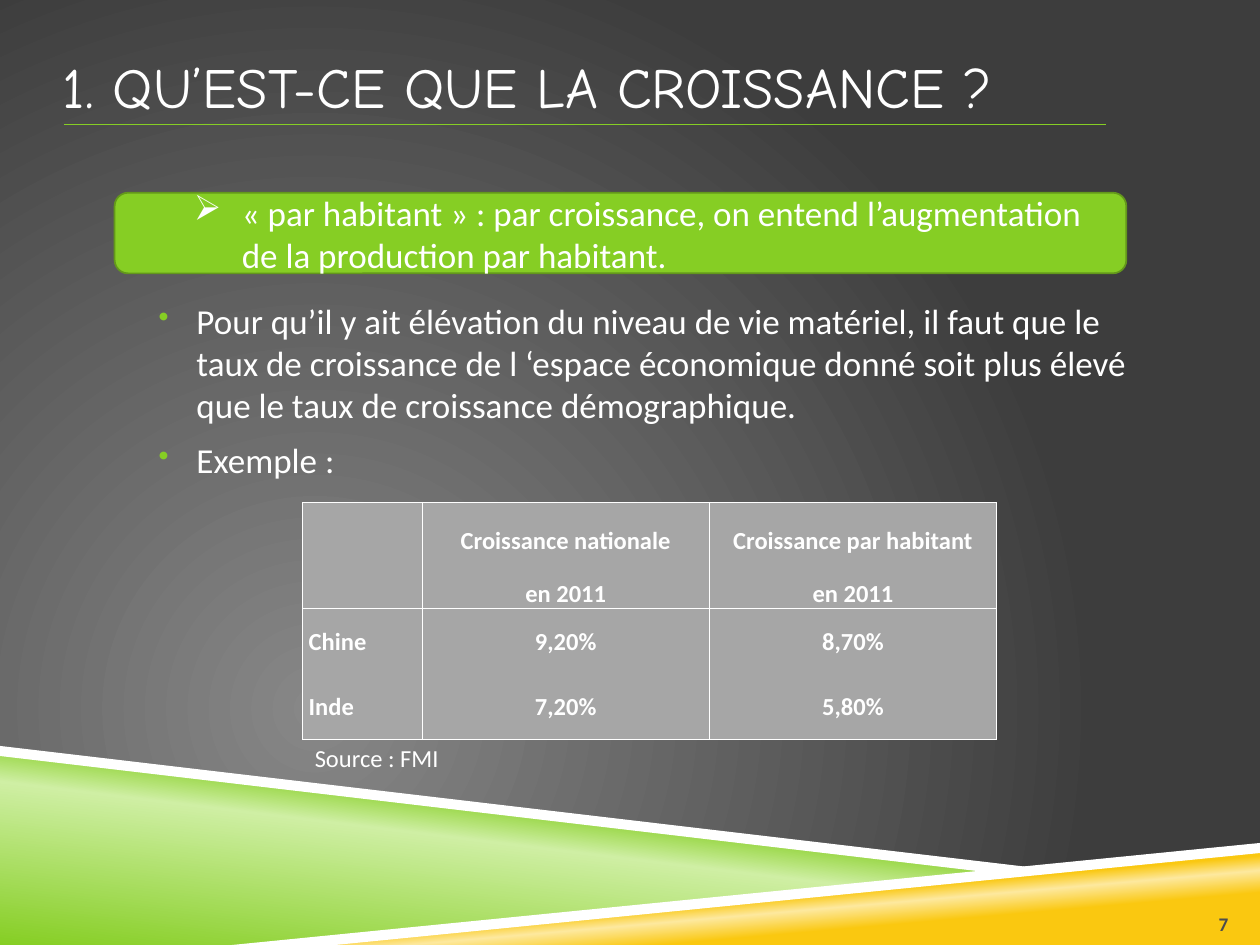
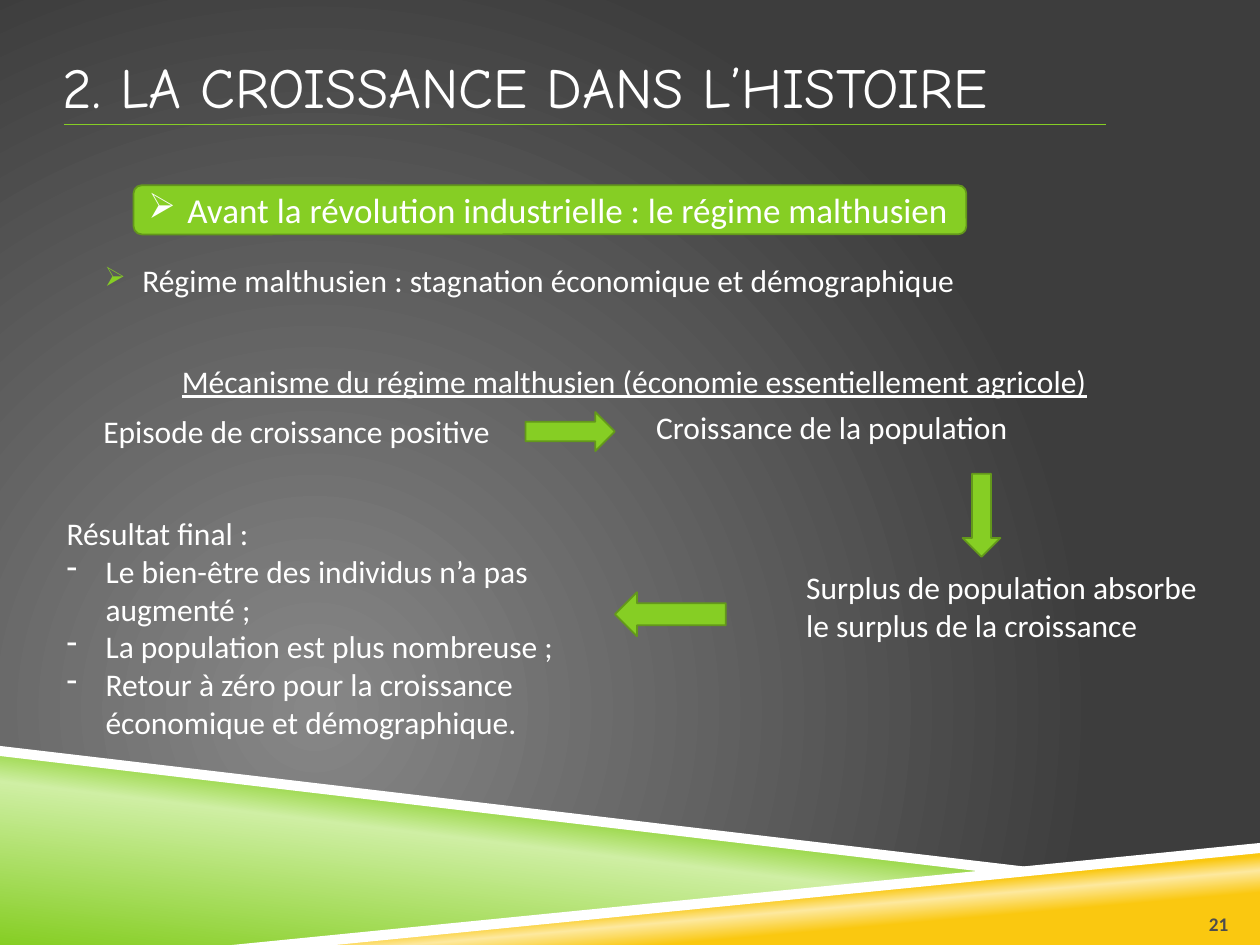
"""Build two lesson slides about economic growth."""
from dataclasses import dataclass
from typing import Any, Optional

from lxml import etree
from pptx import Presentation
from pptx import util as u
from pptx.dml.color import RGBColor
from pptx.enum import shapes, text
from pptx.oxml.ns import qn

WHITE = RGBColor(0xFF, 0xFF, 0xFF)
GREEN = RGBColor(0x86, 0xCE, 0x24)
PALE = RGBColor(0xCF, 0xEF, 0xA4)
EDGE = RGBColor(0x63, 0x98, 0x1B)
GOLD = RGBColor(0xFA, 0xC8, 0x10)
CREAM = RGBColor(0xFD, 0xE9, 0x9F)
GREY = RGBColor(0xA6, 0xA6, 0xA6)
ASH = RGBColor(0x87, 0x87, 0x87)
DARK = RGBColor(0x3D, 0x3D, 0x3D)
SLATE = RGBColor(0x4D, 0x4D, 0x4D)

BODY = "Calibri"
HEAD = "Comic Neue"
LEFT, MID, RIGHT = text.PP_ALIGN.LEFT, text.PP_ALIGN.CENTER, text.PP_ALIGN.RIGHT
TOP, CENTRE, LOW = (text.MSO_ANCHOR.TOP, text.MSO_ANCHOR.MIDDLE,
                    text.MSO_ANCHOR.BOTTOM)
KIND = shapes.MSO_SHAPE
PAD = (0.1, 0.05, 0.1, 0.05)
FLUSH = (0, 0.05, 0, 0.05)


@dataclass(frozen=True)
class Box:
    """A place on the slide, in inches."""
    x: float
    y: float
    w: float
    h: float

    def emu(self) -> tuple:
        """Give the place as lengths."""
        return tuple(u.Inches(n) for n in (self.x, self.y, self.w, self.h))


@dataclass(frozen=True)
class Para:
    """A paragraph with its look."""
    words: str
    size: float = 18
    mark: str = ""
    tint: Optional[RGBColor] = None
    left: float = 0
    hang: float = 0
    gap: float = 0
    level: int = 0
    align: Any = LEFT
    font: str = BODY
    ink: RGBColor = WHITE
    bold: bool = False
    under: bool = False


@dataclass(frozen=True)
class Band:
    """A filled outline at the foot of the slide."""
    points: tuple
    stops: tuple
    angle: int = 0


@dataclass(frozen=True)
class Arrow:
    """A block arrow."""
    kind: Any
    box: Box


BANDS = (
    Band(((0, 5.97), (7.92, 6.92), (2, 7.5), (0, 7.5)),
         ((0, GREEN), (52, PALE), (66, GREEN)), 277),
    Band(((1.98, 7.5), (10, 6.72), (10, 7.5)),
         ((28, GOLD), (40, CREAM), (48, GOLD)), 265),
    Band(((0, 5.92), (0, 6), (7.9, 6.93), (8.32, 6.9)), ((0, WHITE),)),
    Band(((10, 6.69), (1.84, 7.5), (2.66, 7.5), (10, 6.77)), ((0, WHITE),)),
)
ARROWS = (
    Arrow(KIND.RIGHT_ARROW, Box(4.17, 3.27, 0.71, 0.31)),
    Arrow(KIND.DOWN_ARROW, Box(7.64, 3.76, 0.3, 0.66)),
    Arrow(KIND.LEFT_ARROW, Box(4.88, 4.7, 0.88, 0.35)),
)
ROWS = (
    ("", "Croissance nationale", "Croissance par habitant"),
    ("", "en 2011", "en 2011"),
    ("Chine", "9,20%", "8,70%"),
    ("Inde", "7,20%", "5,80%"),
)


def add(root: Any, tag: str, **attrs: Any) -> Any:
    """Append an element with attributes."""
    return etree.SubElement(root, qn(tag), {k: str(v) for k, v in attrs.items()})


def tone(root: Any, ink: RGBColor) -> None:
    """Append a plain colour."""
    add(root, "a:srgbClr", val=ink)


def blend(grad: Any, stops: tuple) -> None:
    """Replace the content of a gradient by new stops."""
    for child in list(grad):
        grad.remove(child)
    group = add(grad, "a:gsLst")
    for place, ink in stops:
        tone(add(group, "a:gs", pos=place * 1000), ink)


def style(para: Any, look: Para) -> None:
    """Write one paragraph and format it."""
    para.text = look.words
    para.alignment = look.align
    para.level = look.level
    if look.gap:
        para.space_before = u.Pt(look.gap)
    props = para._p.get_or_add_pPr()
    props.set("marL", str(u.Inches(look.left)))
    props.set("indent", str(u.Inches(-look.hang)))
    if look.mark:
        if look.tint:
            tone(add(props, "a:buClr"), look.tint)
            add(props, "a:buSzPct", val=85000)
        add(props, "a:buChar", char=look.mark)
    for run in para.runs:
        font = run.font
        font.name, font.size, font.bold = look.font, u.Pt(look.size), look.bold
        font.color.rgb = look.ink
        font.underline = look.under


def write(frame: Any, paras: tuple, anchor: Any = TOP, pad: tuple = PAD) -> None:
    """Fill a text frame with paragraphs."""
    frame.word_wrap = True
    frame.vertical_anchor = anchor
    (frame.margin_left, frame.margin_top, frame.margin_right,
     frame.margin_bottom) = (u.Inches(n) for n in pad)
    frame.text = "\n".join(look.words for look in paras)
    for para, look in zip(frame.paragraphs, paras):
        style(para, look)


def note(slide: Any, box: Box, *paras: Para, anchor: Any = TOP,
         pad: tuple = PAD) -> None:
    """Add a text box."""
    write(slide.shapes.add_textbox(*box.emu()).text_frame, paras, anchor, pad)


def block(slide: Any, kind: Any, box: Box) -> Any:
    """Add a green shape with a darker edge."""
    shape = slide.shapes.add_shape(kind, *box.emu())
    shape.shadow.inherit = False
    shape.fill.solid()
    shape.fill.fore_color.rgb = GREEN
    shape.line.color.rgb = EDGE
    shape.line.width = u.Pt(1)
    return shape


def pill(slide: Any, box: Box, look: Para) -> None:
    """Add a rounded heading."""
    shape = block(slide, KIND.ROUNDED_RECTANGLE, box)
    write(shape.text_frame, (look,), CENTRE)


def strip(slide: Any, band: Band) -> None:
    """Draw one band."""
    first, *rest = [tuple(u.Inches(n) for n in spot) for spot in band.points]
    pen = slide.shapes.build_freeform(*first, scale=1.0)
    pen.add_line_segments(rest, close=True)
    shape = pen.convert_to_shape()
    shape.shadow.inherit = False
    shape.line.fill.background()
    if len(band.stops) == 1:
        shape.fill.solid()
        shape.fill.fore_color.rgb = band.stops[0][1]
        return
    shape.fill.gradient()
    grad = shape._element.spPr.find(qn("a:gradFill"))
    blend(grad, band.stops)
    add(grad, "a:lin", ang=band.angle * 60000, scaled=0)


def page(deck: Any, title: str, count: str) -> Any:
    """Add a slide with bands, title, rule and number."""
    slide = deck.slides.add_slide(deck.slide_layouts[6])
    for band in BANDS:
        strip(slide, band)
    note(slide, Box(0.5, 0.3, 8.33, 0.77), Para(title, 32.4, font=HEAD),
         anchor=CENTRE, pad=FLUSH)
    rule = slide.shapes.add_connector(
        shapes.MSO_CONNECTOR.STRAIGHT,
        *(u.Inches(n) for n in (0.51, 0.99, 8.78, 0.99)))
    rule.line.color.rgb = GREEN
    rule.line.width = u.Pt(0.75)
    add(rule._element.spPr, "a:effectLst")
    note(slide, Box(9.25, 7.02, 0.5, 0.4),
         Para(count, 11, align=RIGHT, ink=SLATE, bold=True),
         anchor=LOW, pad=(0, 0.05, 0, 0))
    return slide


def frame_cell(cell: Any, sides: str) -> None:
    """Draw the named sides of a cell and clear the others."""
    props = cell._tc.get_or_add_tcPr()
    for place, side in enumerate("LRTB"):
        line = add(props, f"a:ln{side}", w=u.Pt(0.5))
        if side in sides:
            tone(add(line, "a:solidFill"), WHITE)
        else:
            add(line, "a:noFill")
        props.insert(place, line)


def rates(slide: Any) -> None:
    """Add the table of growth rates."""
    table = slide.shapes.add_table(
        4, 3, *Box(2.4, 3.99, 5.51, 1.88).emu()).table
    table.first_row = table.horz_banding = False
    for col, width in zip(table.columns, (0.95, 2.28, 2.28)):
        col.width = u.Inches(width)
    for row, (line, high) in enumerate(zip(ROWS, (0.42, 0.42, 0.52, 0.52))):
        table.rows[row].height = u.Inches(high)
        for col, words in enumerate(line):
            cell = table.cell(row, col)
            cell.fill.solid()
            cell.fill.fore_color.rgb = GREY
            cell.vertical_anchor = LOW if row < 2 else CENTRE
            cell.margin_left = u.Inches(0.01 if col else 0.05)
            cell.margin_top = cell.margin_right = u.Inches(0.01)
            cell.margin_bottom = 0
            style(cell.text_frame.paragraphs[0],
                  Para(words, 14, align=MID if col else LEFT, bold=True))
            frame_cell(cell, "LRB" if row % 2 else "LRT")


def growth(deck: Any) -> None:
    """Build the slide that defines growth."""
    slide = page(deck, "1. QU’EST-CE QUE LA CROISSANCE ?", "7")
    pill(slide, Box(0.91, 1.53, 8.03, 0.64), Para(
        "« par habitant » : par croissance, on entend l’augmentation "
        "de la production par habitant.", 20, "➢", left=0.88, hang=0.38, level=1))
    dot = dict(size=20, mark="•", tint=GREEN, left=0.81, hang=0.3, level=1)
    note(slide, Box(0.75, 2.33, 8.5, 3.5),
         Para("Pour qu’il y ait élévation du niveau de vie matériel, il faut que "
              "le taux de croissance de l ‘espace économique donné soit plus "
              "élevé que le taux de croissance démographique.", **dot),
         Para("Exemple :", gap=7, **dot), pad=FLUSH)
    note(slide, Box(2.4, 5.85, 2.24, 0.34), Para("Source : FMI", 14))
    rates(slide)


def cycle(deck: Any) -> None:
    """Build the slide on the Malthusian regime."""
    slide = page(deck, "2. LA CROISSANCE DANS L’HISTOIRE", "21")
    pill(slide, Box(1.06, 1.47, 6.61, 0.39), Para(
        "Avant la révolution industrielle : le régime malthusien",
        20, "➢", left=0.31, hang=0.31))
    note(slide, Box(0.75, 2.02, 8.5, 4.09),
         Para("Régime malthusien : stagnation économique et démographique",
              mark="➢", tint=GREEN, left=0.38, hang=0.3),
         Para("Mécanisme du régime malthusien (économie essentiellement agricole)",
              left=0.07, gap=36, align=MID, under=True),
         Para("Episode de croissance positive", left=0.07, gap=7), pad=FLUSH)
    for arrow in ARROWS:
        block(slide, arrow.kind, arrow.box)
    note(slide, Box(5.11, 3.19, 3.03, 0.4), Para("Croissance de la population"))
    note(slide, Box(6.3, 4.46, 3.38, 0.71),
         Para("Surplus de population absorbe"),
         Para("le surplus de la croissance"))
    ends = ("Le bien-être des individus n’a pas augmenté ;",
            "La population est plus nombreuse ;",
            "Retour à zéro pour la croissance économique et démographique.")
    note(slide, Box(0.43, 4.03, 4.13, 1.92), Para("Résultat final :"),
         *(Para(end, mark="-", left=0.31, hang=0.31) for end in ends))


def main() -> None:
    """Build and save the deck."""
    deck = Presentation()
    deck.slide_width, deck.slide_height = u.Inches(10), u.Inches(7.5)
    master = deck.slide_master
    master.background.fill.gradient()
    grad = next(master.element.iter(qn("a:gradFill")))
    blend(grad, ((0, ASH), (100, DARK)))
    ring = add(grad, "a:path", path="circle")
    add(ring, "a:fillToRect", l=50000, t=100000, r=100000, b=50000)
    growth(deck)
    cycle(deck)
    deck.save("out.pptx")


if __name__ == "__main__":
    main()
